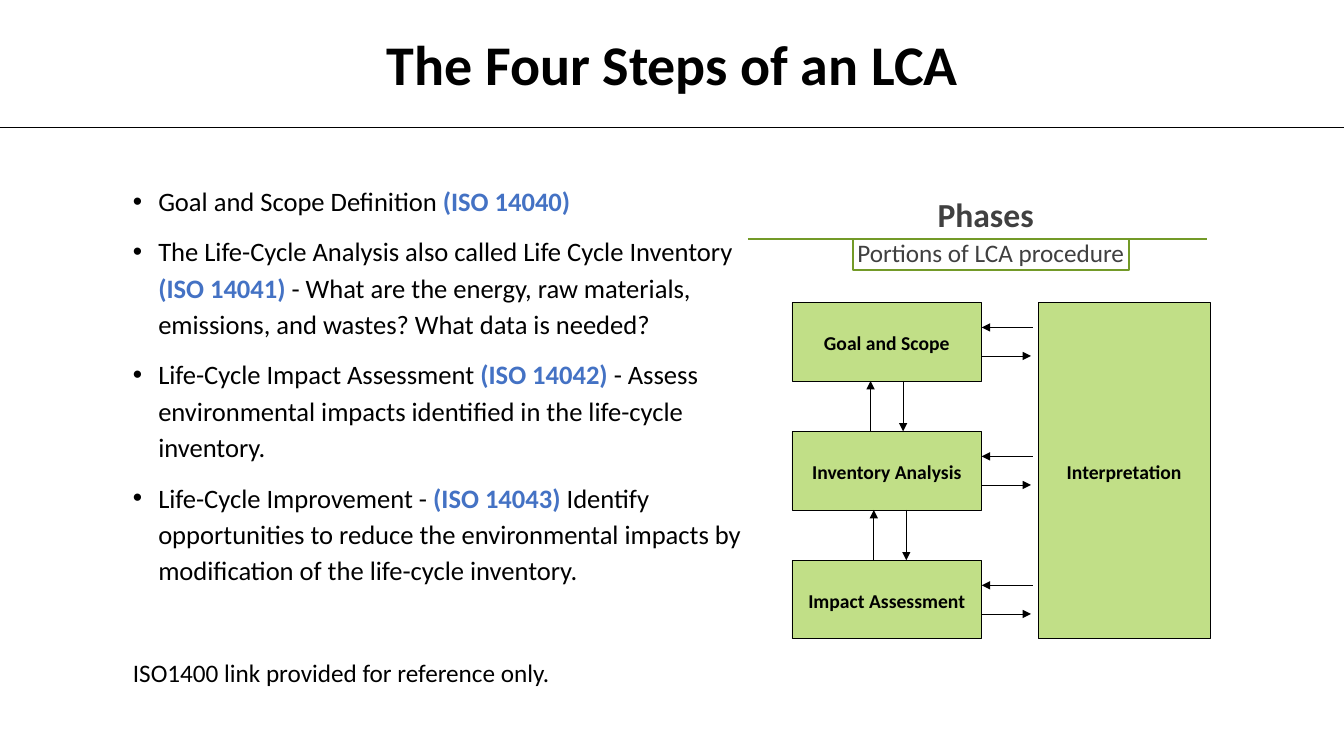
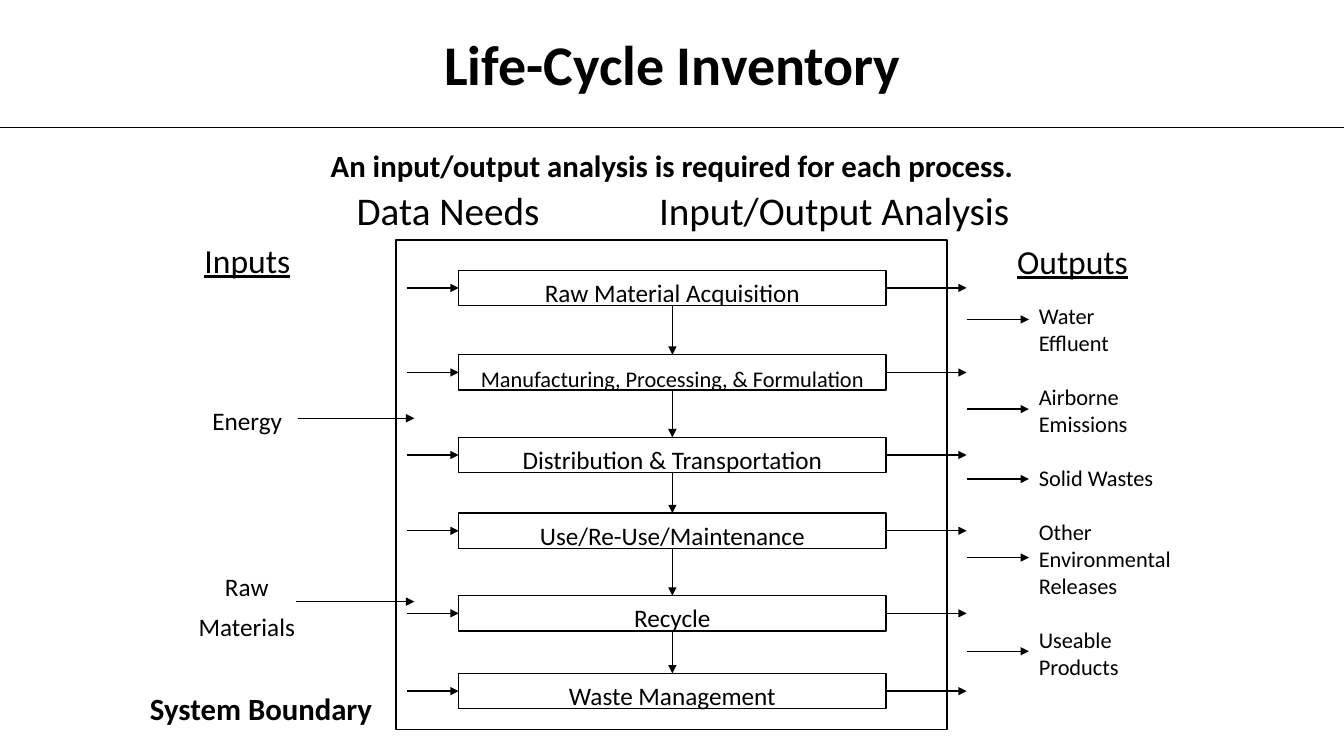
from dataclasses import dataclass
from typing import NamedTuple

from lxml import etree
from pptx import Presentation
from pptx.dml.color import RGBColor
from pptx.enum.shapes import MSO_CONNECTOR, MSO_SHAPE
from pptx.enum.text import MSO_ANCHOR, PP_ALIGN
from pptx.oxml.ns import qn
from pptx.util import Cm, Pt

RECT = MSO_SHAPE.RECTANGLE
STRAIGHT = MSO_CONNECTOR.STRAIGHT
LEFT, CENTER = PP_ALIGN.LEFT, PP_ALIGN.CENTER
TOP, MIDDLE, BOTTOM = MSO_ANCHOR.TOP, MSO_ANCHOR.MIDDLE, MSO_ANCHOR.BOTTOM
SIDE_TOP, SIDE_LEFT, SIDE_BOTTOM, SIDE_RIGHT = range(4)


@dataclass(frozen=True)
class Theme:
    font: str = "Calibri"
    black: str = "000000"
    gray: str = "404040"
    blue: str = "4472C4"
    leaf: str = "C1DF87"
    green: str = "739A28"
    title: float = 40
    header: float = 28
    heading: float = 24
    subtitle: float = 22
    body: float = 19
    label: float = 18
    small: float = 16
    phase: float = 14
    thin: float = 0.5
    line: float = 1
    thick: float = 1.5


class Box(NamedTuple):
    """Left, top, width and height in centimetres."""
    x: float
    y: float
    w: float
    h: float

    @property
    def right(self) -> float:
        return self.x + self.w

    @property
    def bottom(self) -> float:
        return self.y + self.h

    @property
    def mid_x(self) -> float:
        return self.x + self.w / 2

    @property
    def mid_y(self) -> float:
        return self.y + self.h / 2

    def lengths(self) -> list:
        return [Cm(v) for v in self]


class Span(NamedTuple):
    text: str
    size: float
    color: str = "000000"
    bold: bool = False
    underline: bool = False


class Label(NamedTuple):
    box: Box
    span: Span
    spacing: object = 1.0
    anchor: object = TOP
    align: object = CENTER
    inset: float = 0.25


class Item(NamedTuple):
    before: str
    standard: str
    after: str = ""


class Step(NamedTuple):
    text: str
    y: float
    size: float


T = Theme()
SLIDE_W, SLIDE_H = 33.87, 19.05
TITLE_BOX = Box(7.19, 0.79, 19.51, 1.8)
TITLE_RULE_Y = 3.2
FIXED = Pt(28)

ITEMS = [
    Item("Goal and Scope Definition ", "(ISO 14040)"),
    Item("The Life-Cycle Analysis also called Life Cycle Inventory ", "(ISO 14041) ",
         "- What are the energy, raw materials, emissions, and wastes? What data is needed?"),
    Item("Life-Cycle Impact Assessment ", "(ISO 14042) ",
         "- Assess environmental impacts identified in the life-cycle inventory."),
    Item("Life-Cycle Improvement - ", "(ISO 14043)",
         " Identify opportunities to reduce the environmental impacts by modification "
         "of the life-cycle inventory."),
]
PHASES = ["Goal and Scope", "Inventory Analysis", "Impact Assessment"]

STEPS = [
    Step("Raw Material Acquisition", 6.81, T.label),
    Step("Manufacturing, Processing, & Formulation", 8.94, T.small),
    Step("Distribution & Transportation", 11.02, T.label),
    Step("Use/Re-Use/Maintenance", 12.93, T.label),
    Step("Recycle", 15.01, T.label),
    Step("Waste Management", 16.97, T.label),
]
OUTPUTS = [
    ["Water", "Effluent"],
    ["Airborne", "Emissions"],
    ["Solid Wastes"],
    ["Other", "Environmental", "Releases"],
    ["Useable", "Products"],
]
OUTPUT_ARROWS_Y = [8.05, 10.31, 12.07, 14.05, 16.41]
INVENTORY_LABELS = [
    Label(Box(7.09, 3.63, 19.69, 1.17),
          Span("An input/output analysis is required for each process.", T.subtitle, bold=True),
          0.9, MIDDLE),
    Label(Box(8.99, 5.05, 7, 0.97), Span("Data Needs", T.header), Pt(20), BOTTOM, LEFT, 0),
    Label(Box(16.61, 5.05, 10, 0.97), Span("Input/Output Analysis", T.header),
          Pt(20), BOTTOM, LEFT, 0),
    Label(Box(4.8, 5.94, 2.87, 1.24), Span("Inputs", T.heading, underline=True), FIXED),
    Label(Box(25.25, 5.94, 3.56, 1.27), Span("Outputs", T.heading, underline=True)),
    Label(Box(5.05, 9.86, 2.36, 1.17), Span("Energy", T.label), FIXED),
    Label(Box(4.62, 14.05, 3.2, 2.24), Span("Raw Materials", T.label), FIXED),
    Label(Box(2.82, 17.2, 7.52, 1.24), Span("System Boundary", T.subtitle, bold=True),
          FIXED, MIDDLE),
]


def set_frame(tf, anchor=TOP, inset: float = 0.25, pad: float = 0.13) -> None:
    tf.word_wrap = True
    tf.vertical_anchor = anchor
    tf.margin_left = tf.margin_right = Cm(inset)
    tf.margin_top = tf.margin_bottom = Cm(pad)


def add_paragraph(tf, spans: list, align=LEFT, spacing=1.0, before: float = 0):
    """Fill the empty first paragraph, or append a new one."""
    p = tf.paragraphs[0]
    if p.runs:
        p = tf.add_paragraph()
    p.alignment = align
    p.line_spacing = spacing
    p.space_before = Pt(before)
    for span in spans:
        r = p.add_run()
        r.text = span.text
        f = r.font
        f.name, f.size = T.font, Pt(span.size)
        f.bold, f.underline = span.bold, span.underline
        f.color.rgb = RGBColor.from_string(span.color)
    return p


def add_bullet(p) -> None:
    pPr = p._p.get_or_add_pPr()
    pPr.set("marL", str(Cm(0.64)))
    pPr.set("indent", str(-Cm(0.64)))
    etree.SubElement(pPr, qn("a:buFont")).set("typeface", "Arial")
    etree.SubElement(pPr, qn("a:buChar")).set("char", "•")


def add_text_frame(s, box: Box, anchor=TOP, inset: float = 0.25):
    tf = s.shapes.add_textbox(*box.lengths()).text_frame
    set_frame(tf, anchor, inset)
    return tf


def add_label(s, label: Label) -> None:
    tf = add_text_frame(s, label.box, label.anchor, label.inset)
    add_paragraph(tf, [label.span], label.align, label.spacing)


def add_rect(s, box: Box, span: Span | None = None, fill: str = "",
             line: str = T.black, width: float = T.line, spacing=1.0):
    sp = s.shapes.add_shape(RECT, *box.lengths())
    sp.shadow.inherit = False
    if fill:
        sp.fill.solid()
        sp.fill.fore_color.rgb = RGBColor.from_string(fill)
    else:
        sp.fill.background()
    sp.line.color.rgb = RGBColor.from_string(line)
    sp.line.width = Pt(width)
    if span:
        set_frame(sp.text_frame, MIDDLE, 0, 0)
        add_paragraph(sp.text_frame, [span], CENTER, spacing)
    return sp


def add_line(s, x1: float, y1: float, x2: float, y2: float, width: float = T.line,
             color: str = T.black, arrow: bool = True):
    cx = s.shapes.add_connector(STRAIGHT, Cm(x1), Cm(y1), Cm(x2), Cm(y2))
    cx.line.color.rgb = RGBColor.from_string(color)
    cx.line.width = Pt(width)
    if arrow:
        etree.SubElement(cx.line._get_or_add_ln(), qn("a:tailEnd")).set("type", "triangle")
    etree.SubElement(cx._element.spPr, qn("a:effectLst"))
    return cx


def add_titled_slide(prs, title: str):
    s = prs.slides.add_slide(prs.slide_layouts[6])
    add_label(s, Label(TITLE_BOX, Span(title, T.title, bold=True), 0.9, MIDDLE))
    add_line(s, 0, TITLE_RULE_Y, SLIDE_W, TITLE_RULE_Y, T.thin, arrow=False)
    return s


def add_phase_diagram(s) -> None:
    boxes = [Box(19.96, 7.62 + 3.25 * i, 4.78, 1.98) for i in range(len(PHASES))]
    result = Box(26.16, boxes[0].y, 4.34, boxes[-1].bottom - boxes[0].y)
    for text, box in zip(PHASES + ["Interpretation"], boxes + [result]):
        add_rect(s, box, Span(text, T.phase, bold=True), T.leaf, width=T.thin, spacing=1.05)
    for box in boxes:
        out_y, back_y = box.mid_y + 0.36, box.mid_y - 0.36
        add_line(s, box.right, out_y, result.x - 0.18, out_y, T.thin)
        add_line(s, result.x - 0.13, back_y, box.right, back_y, T.thin)
    for i, (upper, lower) in enumerate(zip(boxes, boxes[1:])):
        x = upper.mid_x + 0.08 * i
        add_line(s, x - 0.41, lower.y, x - 0.41, upper.bottom, T.thin)
        add_line(s, x + 0.41, upper.bottom, x + 0.41, lower.y, T.thin)


def build_four_steps(prs) -> None:
    s = add_titled_slide(prs, "The Four Steps of an LCA")
    tf = add_text_frame(s, Box(3.1, 4.42, 15.88, 13.1))
    for item in ITEMS:
        spans = [Span(item.before, T.body), Span(item.standard, T.body, T.blue, True)]
        if item.after:
            spans.append(Span(item.after, T.body))
        add_bullet(add_paragraph(tf, spans, spacing=1.14, before=10))
    add_paragraph(tf, [Span("ISO1400 link provided for reference only.", T.label)],
                  spacing=1.14, before=48)

    add_label(s, Label(Box(19.05, 4.88, 11.58, 1.2),
                       Span("Phases", T.heading, T.gray, True), 0.9))
    add_line(s, 18.85, 6.02, 30.43, 6.02, T.thick, T.green, arrow=False)
    add_rect(s, Box(21.49, 6.02, 6.96, 0.79),
             Span("Portions of LCA procedure", T.label, T.gray),
             line=T.green, width=T.thick, spacing=0.9)
    add_phase_diagram(s)


def add_process_chain(s) -> None:
    previous, previous_box = None, None
    for step in STEPS:
        box = Box(11.56, step.y, 10.77, 0.89)
        sp = add_rect(s, box, Span(step.text, step.size), spacing=FIXED)
        add_line(s, 10.25, box.mid_y, box.x, box.mid_y).end_connect(sp, SIDE_LEFT)
        add_line(s, box.right, box.mid_y, 24.36, box.mid_y).begin_connect(sp, SIDE_RIGHT)
        if previous:
            cx = add_line(s, box.mid_x, previous_box.bottom, box.mid_x, box.y)
            cx.begin_connect(previous, SIDE_BOTTOM)
            cx.end_connect(sp, SIDE_TOP)
        previous, previous_box = sp, box


def build_inventory(prs) -> None:
    s = add_titled_slide(prs, "Life-Cycle Inventory")
    for label in INVENTORY_LABELS:
        add_label(s, label)
    add_rect(s, Box(9.98, 6.05, 13.89, 12.34))
    add_process_chain(s)
    for x, y in [(7.52, 10.54), (7.47, 15.16)]:
        add_line(s, x, y, 10.44, y)

    for y in OUTPUT_ARROWS_Y:
        add_line(s, 24.36, y, 25.93, y)
    tf = add_text_frame(s, Box(25.93, 7.49, 3.91, 9.83))
    for group in OUTPUTS:
        for i, text in enumerate(group):
            add_paragraph(tf, [Span(text, T.small)], before=0 if i else 19.5)


def main() -> None:
    prs = Presentation()
    prs.slide_width, prs.slide_height = Cm(SLIDE_W), Cm(SLIDE_H)
    build_four_steps(prs)
    build_inventory(prs)
    prs.save("out.pptx")


if __name__ == "__main__":
    main()
